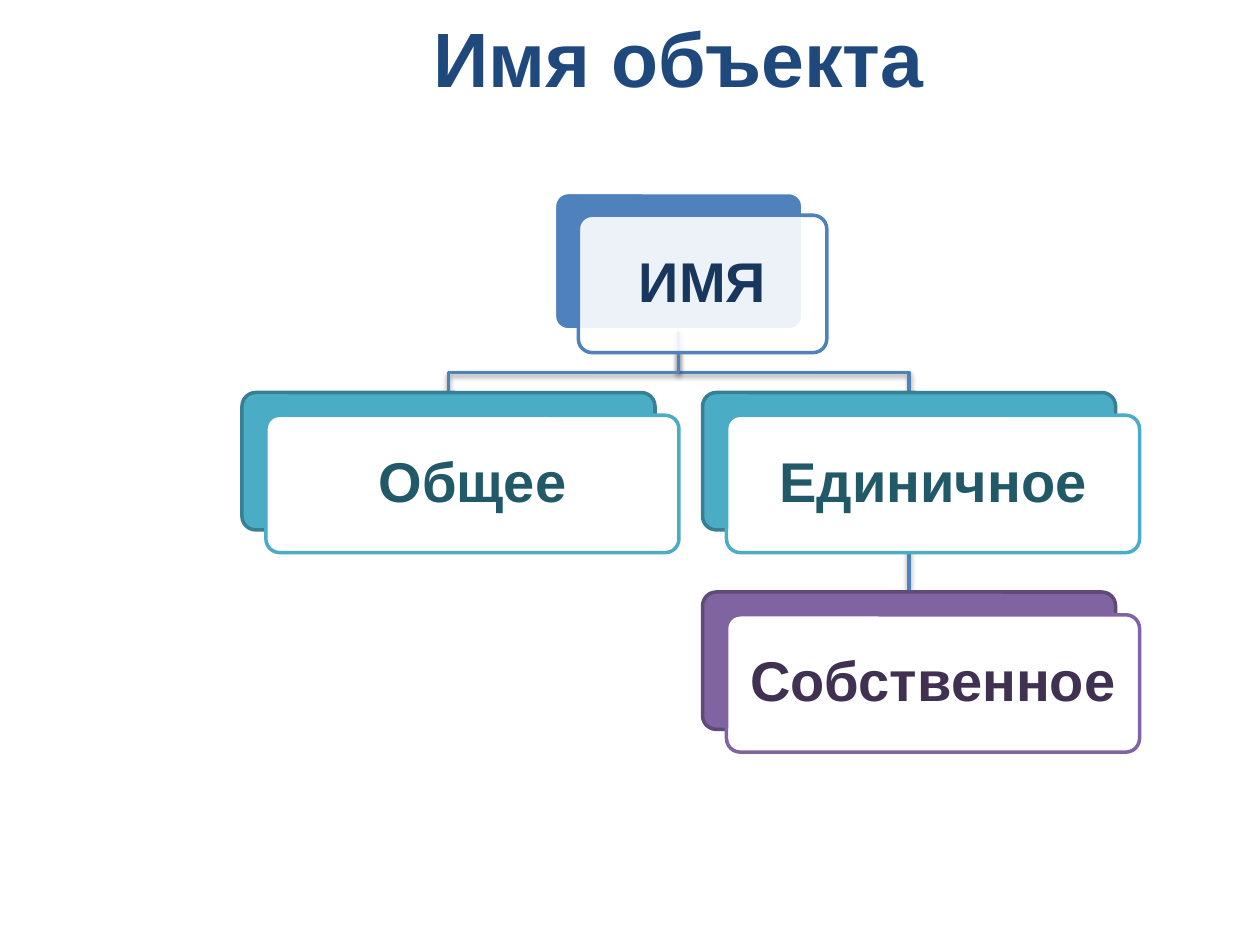
from lxml import etree
from pptx import Presentation
from pptx.dml.color import RGBColor
from pptx.enum.shapes import MSO_SHAPE
from pptx.enum.text import MSO_ANCHOR, PP_ALIGN
from pptx.oxml.ns import qn
from pptx.util import Pt

ROUNDED = MSO_SHAPE.ROUNDED_RECTANGLE
MIDDLE = MSO_ANCHOR.MIDDLE
CENTER = PP_ALIGN.CENTER

CARD_HEIGHT = 78.5
CARD_SHIFT = (13.7, 13)
ROOT_WIDTH, CHILD_WIDTH = 142, 236
ROOT_TOP, CHILD_TOP, PROPER_TOP = 110, 224.3, 338.3
COMMON_X, ROOT_X, SINGLE_X = 256.3, 387.8, 519.5
BEND_Y = 212.8


def color(hex_text):
    return RGBColor.from_string(hex_text)


def write_text(shape, text, size=32, ink="000000", inset=0, spacing=1.0):
    frame = shape.text_frame
    frame.word_wrap = True
    frame.vertical_anchor = MIDDLE
    frame.margin_left = frame.margin_right = Pt(inset)
    frame.margin_top = frame.margin_bottom = Pt(inset)
    paragraph = frame.paragraphs[0]
    paragraph.alignment = CENTER
    paragraph.line_spacing = spacing
    run = paragraph.add_run()
    run.text = text
    run.font.name = Style.font
    run.font.size = Pt(size)
    run.font.bold = True
    run.font.color.rgb = color(ink)


class Style:
    font = "Arial"
    line_width = 2
    link_color = "4F81BD"
    title_color = "1F497D"

    def __init__(self, slide):
        self.slide = slide

    def title(self, text, left, top, width, height):
        box = self.slide.shapes.add_textbox(Pt(left), Pt(top), Pt(width), Pt(height))
        write_text(box, text, size=44, ink=self.title_color)

    def link(self, start, *corners):
        builder = self.slide.shapes.build_freeform(Pt(start[0]), Pt(start[1]))
        builder.add_line_segments([(Pt(x), Pt(y)) for x, y in corners], close=False)
        shape = builder.convert_to_shape()
        shape.fill.background()
        shape.line.color.rgb = color(self.link_color)
        shape.line.width = Pt(self.line_width)
        # Soft shadow straight below the line
        effects = etree.SubElement(shape._element.spPr, qn("a:effectLst"))
        shadow = etree.SubElement(effects, qn("a:outerShdw"), blurRad="40000",
                                  dist="20000", dir="5400000", rotWithShape="0")
        shade = etree.SubElement(shadow, qn("a:srgbClr"), val="000000")
        etree.SubElement(shade, qn("a:alpha"), val="38000")

    def panel(self, left, top, width, fill, line):
        shape = self.slide.shapes.add_shape(
            ROUNDED, Pt(left), Pt(top), Pt(width), Pt(CARD_HEIGHT))
        shape.adjustments[0] = 0.1
        shape.shadow.inherit = False
        shape.fill.solid()
        shape.fill.fore_color.rgb = color(fill)
        shape.line.color.rgb = color(line)
        shape.line.width = Pt(self.line_width)
        return shape

    def card(self, text, center, top, width, fill, edge, ink, opacity=100):
        left = center - width / 2
        self.panel(left, top, width, fill, edge)
        front = self.panel(left + CARD_SHIFT[0], top + CARD_SHIFT[1], width, "FFFFFF", fill)
        if opacity < 100:
            tint = front._element.spPr.find(qn("a:solidFill"))[0]
            etree.SubElement(tint, qn("a:alpha"), val=str(opacity * 1000))
        write_text(front, text, ink=ink, inset=6, spacing=0.9)


def main():
    presentation = Presentation()
    presentation.slide_width, presentation.slide_height = Pt(720), Pt(540)
    style = Style(presentation.slides.add_slide(presentation.slide_layouts[6]))

    # Title
    style.title("Имя объекта", 82, 0, 612, 65)

    # Links between the levels
    style.link((SINGLE_X, CHILD_TOP + CARD_HEIGHT), (SINGLE_X, PROPER_TOP))
    for child_x in (SINGLE_X, COMMON_X):
        style.link((ROOT_X, ROOT_TOP + CARD_HEIGHT), (ROOT_X, BEND_Y),
                   (child_x, BEND_Y), (child_x, CHILD_TOP))

    # Cards of the hierarchy
    style.card("ИМЯ", ROOT_X, ROOT_TOP, ROOT_WIDTH, "4F81BD", "FFFFFF", "17375E", opacity=90)
    for text, center in (("Общее", COMMON_X), ("Единичное", SINGLE_X)):
        style.card(text, center, CHILD_TOP, CHILD_WIDTH, "4BACC6", "377F92", "215968")
    style.card("Собственное", SINGLE_X, PROPER_TOP, CHILD_WIDTH, "8064A2", "5F4A78", "403152")

    presentation.save("out.pptx")


if __name__ == "__main__":
    main()
